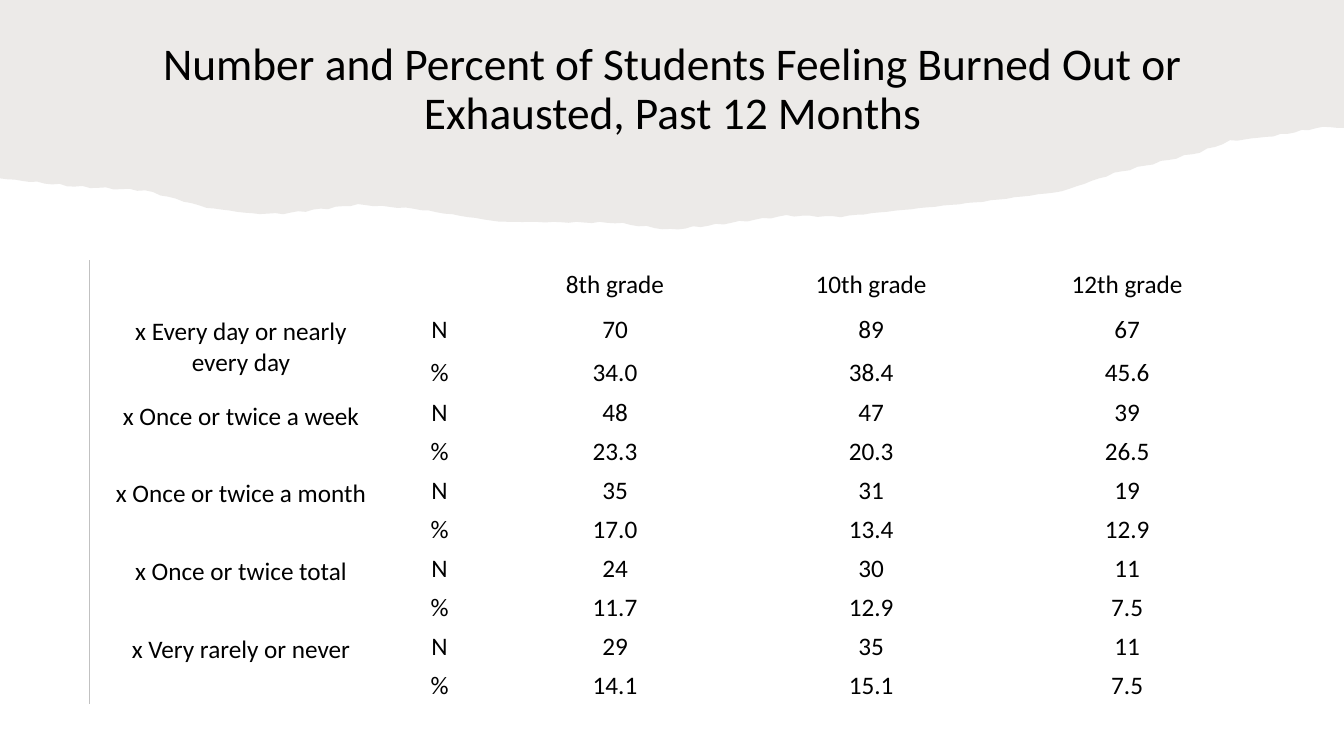
from itertools import pairwise
from math import ceil, sin

from lxml.etree import SubElement
from pptx import Presentation
from pptx.dml.color import RGBColor
from pptx.enum.text import MSO_ANCHOR as Anchor, PP_ALIGN as Align
from pptx.oxml import parse_xml
from pptx.oxml.ns import nsdecls, qn
from pptx.util import Inches, Pt

BLACK = RGBColor(0x00, 0x00, 0x00)
TAUPE = RGBColor(0x82, 0x76, 0x6A)
RULE_GREY = RGBColor(0xC1, 0xC1, 0xC1)
FONT = "Calibri"
PLAIN_TABLE_STYLE = "{2D5ABB26-0587-4C30-8999-92F81FD0307C}"

SLIDE_WIDTH, SLIDE_HEIGHT = 13.33, 7.5

TEAR_BENDS = [
    (0, 1.77), (0.74, 1.85), (1.44, 1.89), (2.05, 2.06), (2.5, 2.12),
    (2.81, 2.12), (3.55, 2.03), (4.1, 2.07), (4.95, 2.2), (6.1, 2.21),
    (6.65, 2.28), (7.1, 2.23), (7.8, 2.14), (8.34, 2.15), (8.8, 2.1),
    (9.75, 2), (10.53, 1.9), (11.05, 1.72), (11.9, 1.51), (12.2, 1.4),
    (12.63, 1.35), (13.12, 1.26), (SLIDE_WIDTH, 1.27),
]
TEAR_STEP = 0.08
TEAR_ROUGHNESS = 0.01

TITLE = "Number and Percent of Students Feeling Burned Out or Exhausted, Past 12 Months"
GRADES = ["8th grade", "10th grade", "12th grade"]
RESPONSES = [
    ("x Every day or nearly every day", ["70", "89", "67"], ["34.0", "38.4", "45.6"]),
    ("x Once or twice a week", ["48", "47", "39"], ["23.3", "20.3", "26.5"]),
    ("x Once or twice a month", ["35", "31", "19"], ["17.0", "13.4", "12.9"]),
    ("x Once or twice total", ["24", "30", "11"], ["11.7", "12.9", "7.5"]),
    ("x Very rarely or never", ["29", "35", "11"], ["14.1", "15.1", "7.5"]),
]
ROWS_PER_RESPONSE = 2
RESPONSE_WIDTH, MEASURE_WIDTH = 3, 0.94
HEADER_HEIGHT, WRAPPED_ROW_HEIGHT = 0.48, 0.42
VALUE_INSETS = (0.01, 0.01, 0.01, 0)
RESPONSE_INSETS = (0.17, 0.08, 0.17, 0.08)


def write_text(frame, text, size=18, line_spacing=None):
    paragraph = frame.paragraphs[0]
    paragraph.alignment = Align.CENTER
    if line_spacing:
        paragraph.line_spacing = line_spacing
    run = paragraph.add_run()
    run.text = text
    run.font.name = FONT
    run.font.size = Pt(size)
    run.font.color.rgb = BLACK


def torn_edge():
    edge = []
    for (start_x, start_y), (end_x, end_y) in pairwise(TEAR_BENDS):
        steps = ceil((end_x - start_x) / TEAR_STEP)
        for step in range(steps):
            share = step / steps
            x = start_x + share * (end_x - start_x)
            y = start_y + share * (end_y - start_y)
            edge.append((x, y + TEAR_ROUGHNESS * sin(40 * x) * sin(13 * x)))
    return edge + [TEAR_BENDS[-1]]


def add_torn_banner(slide, left, top, width):
    outline = [(left + x, top + y) for x, y in torn_edge()] + [(left + width, top)]
    builder = slide.shapes.build_freeform(Inches(left), Inches(top), scale=1.0)
    builder.add_line_segments([(Inches(x), Inches(y)) for x, y in outline], close=True)
    banner = builder.convert_to_shape()
    banner.shadow.inherit = False
    banner.line.fill.background()
    banner.fill.solid()
    banner.fill.fore_color.rgb = TAUPE
    tint = banner.fill._xPr.find(qn("a:solidFill"))[0]
    SubElement(tint, qn("a:alpha")).set("val", "15000")


def add_title(slide, left, top, width, height):
    title = slide.shapes.add_textbox(*map(Inches, (left, top, width, height)))
    frame = title.text_frame
    frame.word_wrap = True
    frame.vertical_anchor = Anchor.BOTTOM
    write_text(frame, TITLE, size=32.4, line_spacing=0.9)


def format_cell(cell, insets=VALUE_INSETS, anchor=Anchor.MIDDLE):
    cell.fill.background()
    cell.vertical_anchor = anchor
    (cell.margin_left, cell.margin_top,
     cell.margin_right, cell.margin_bottom) = map(Inches, insets)


def add_left_rule(cell):
    rule = parse_xml(
        f'<a:lnL {nsdecls("a")} w="{Pt(1)}"><a:solidFill>'
        f'<a:srgbClr val="{RULE_GREY}"/></a:solidFill></a:lnL>'
    )
    cell._tc.get_or_add_tcPr().insert(0, rule)


def size_grid(burnout, width, height):
    grade_width = (width - RESPONSE_WIDTH - MEASURE_WIDTH) / len(GRADES)
    column_widths = [RESPONSE_WIDTH, MEASURE_WIDTH] + [grade_width] * len(GRADES)
    for column, column_width in zip(burnout.columns, column_widths):
        column.width = Inches(column_width)

    top_heights = [HEADER_HEIGHT] + [WRAPPED_ROW_HEIGHT] * ROWS_PER_RESPONSE
    other_rows = len(burnout.rows) - len(top_heights)
    other_height = (height - sum(top_heights)) / other_rows
    for row, row_height in zip(burnout.rows, top_heights + [other_height] * other_rows):
        row.height = Inches(row_height)


def add_burnout_table(slide, left, top, width, height):
    row_count = 1 + ROWS_PER_RESPONSE * len(RESPONSES)
    column_count = 2 + len(GRADES)
    burnout = slide.shapes.add_table(
        row_count, column_count, *map(Inches, (left, top, width, height))
    ).table
    burnout.first_row = False
    burnout.horz_banding = False
    burnout._tbl.tblPr.find(qn("a:tableStyleId")).text = PLAIN_TABLE_STYLE
    size_grid(burnout, width, height)

    for cell in burnout.iter_cells():
        format_cell(cell)
    for row in burnout.rows:
        add_left_rule(row.cells[0])

    value_rows = [["", *GRADES]]
    for response, counts, percents in RESPONSES:
        first_row = len(value_rows)
        response_cell = burnout.cell(first_row, 0)
        response_cell.merge(burnout.cell(first_row + ROWS_PER_RESPONSE - 1, 0))
        format_cell(response_cell, RESPONSE_INSETS, Anchor.TOP)
        write_text(response_cell.text_frame, response)
        value_rows += [["N", *counts], ["%", *percents]]

    for row_index, values in enumerate(value_rows):
        for column_index, value in enumerate(values, start=1):
            if value:
                write_text(burnout.cell(row_index, column_index).text_frame, value)


def main():
    deck = Presentation()
    deck.slide_width, deck.slide_height = Inches(SLIDE_WIDTH), Inches(SLIDE_HEIGHT)
    slide = deck.slides.add_slide(deck.slide_layouts[6])
    add_torn_banner(slide, 0, 0, SLIDE_WIDTH)
    add_title(slide, 0.91, 0.54, 11.52, 0.89)
    add_burnout_table(slide, 0.89, 2.58, 11.56, 4.41)
    deck.save("out.pptx")


if __name__ == "__main__":
    main()
